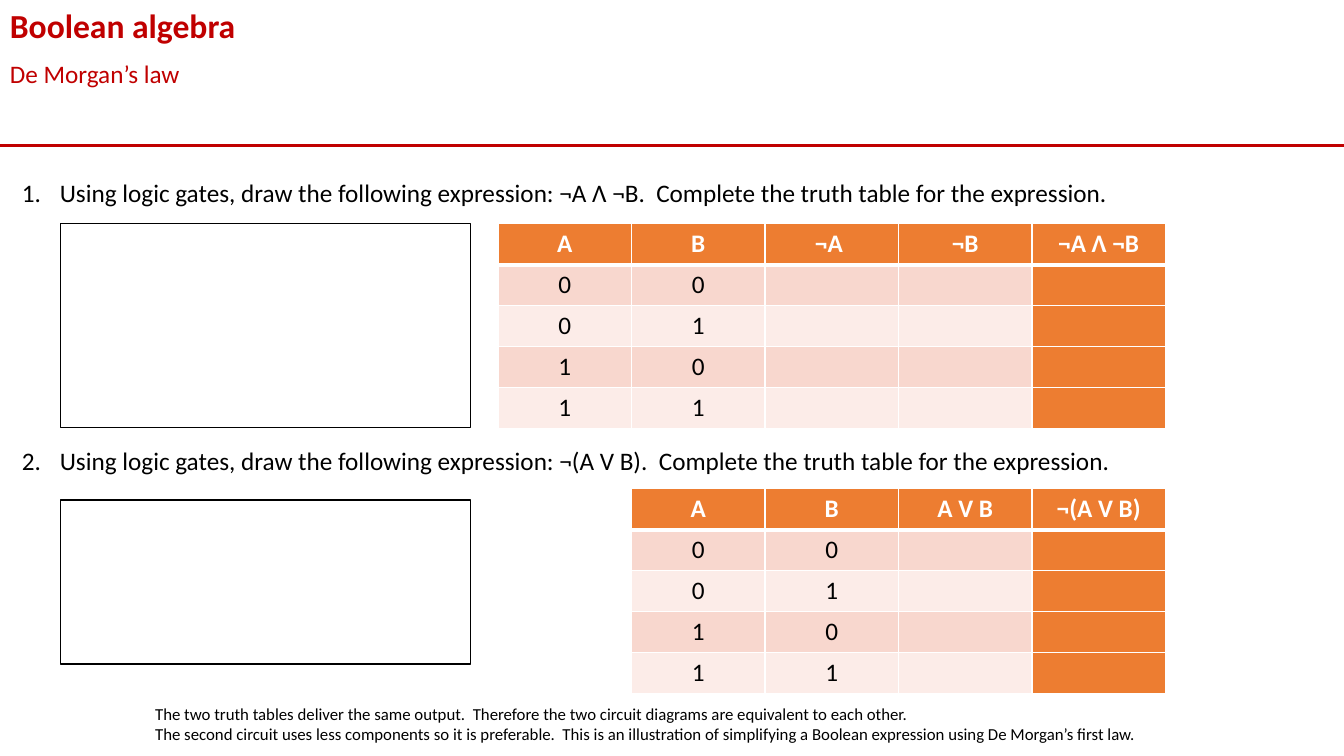
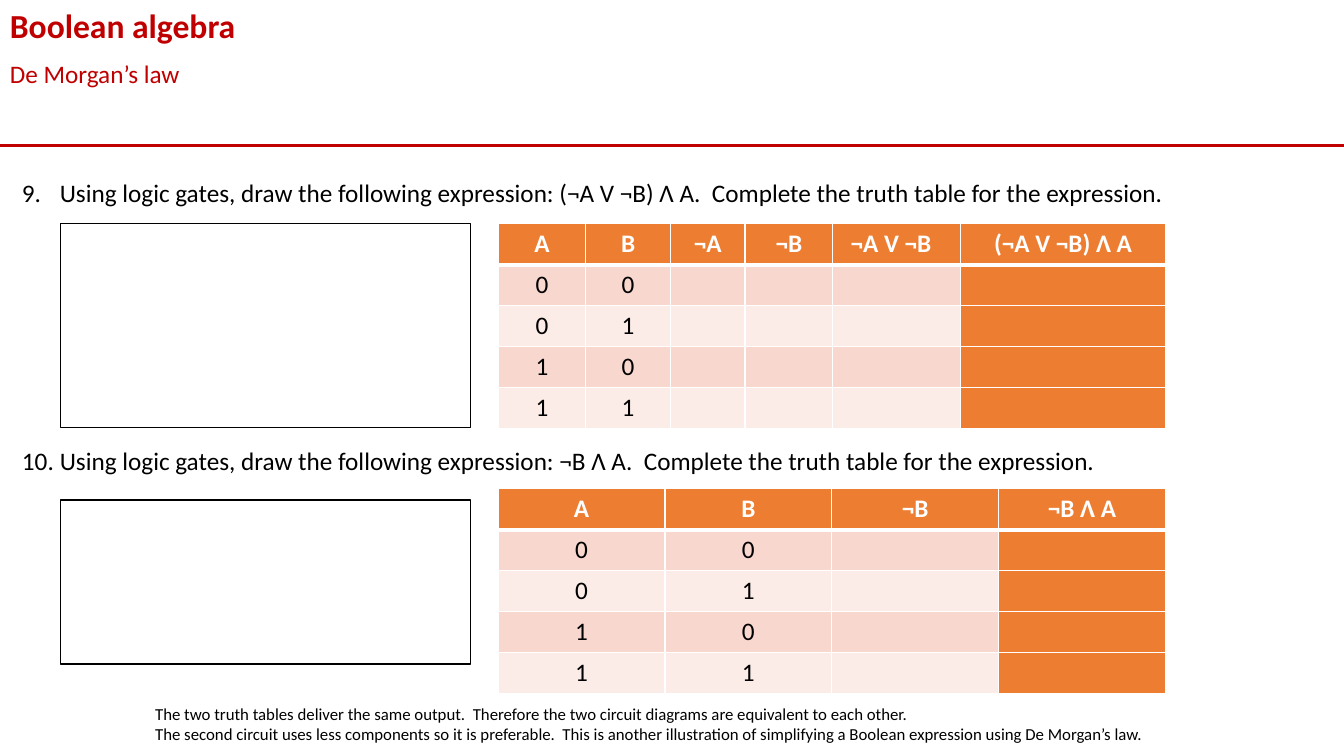
"""Build two Boolean algebra worksheet slides on De Morgan's law."""
import dataclasses

import pptx
import pptx.dml.color
import pptx.enum.shapes
import pptx.enum.text
import pptx.oxml
import pptx.oxml.ns
import pptx.util

Inches = pptx.util.Inches
Pt = pptx.util.Pt

HEADINGS = [("Boolean algebra", 0, 0.5, "title", True), ("De Morgan’s law", 0.53, 0.4, "body", False)]
QUESTION = "Using logic gates, draw the following expression: {}.  Complete the truth table for the expression."
INPUTS = [("0", "0"), ("0", "1"), ("1", "0"), ("1", "1")]
SAME_OUTPUT = (
    "The two truth tables deliver the same output.  "
    "Therefore the two circuit diagrams are equivalent to each other."
)
PREFERABLE = (
    "The second circuit uses less components so it is preferable.  This is {} "
    "of simplifying a Boolean expression using De Morgan’s {}."
)
WORKSHEETS = [
    {
        "first_number": 1,
        "questions": [
            ("¬A Ʌ ¬B", ["A", "B", "¬A ", "¬B", "¬A Ʌ ¬B"], [1.324] * 5),
            ("¬(A V B)", ["A", "B", "A V B", "¬(A V B)"], [1.324] * 4),
        ],
        "note": [SAME_OUTPUT, PREFERABLE.format("an illustration", "first law")],
        "note_width": 10.01,
    },
    {
        "first_number": 9,
        "questions": [
            (
                "(¬A V ¬B) Ʌ A",
                ["A", "B", "¬A", "¬B", "¬A V ¬B  ", "(¬A V ¬B) Ʌ A"],
                [0.87, 0.84, 0.74, 0.87, 1.27, 2.03],
            ),
            ("¬B Ʌ A", ["A", "B", "¬B", "¬B Ʌ A"], [1.655] * 4),
        ],
        "note": [SAME_OUTPUT, PREFERABLE.format("another illustration", "law")],
        "note_width": 10.12,
    },
]
SECTIONS = [
    {"question": 1.71, "table": 2.22, "answer": 2.22, "answer_height": 2.02},
    {"question": 4.37, "table": 4.85, "answer": 4.96, "answer_height": 1.63},
]
PAGE_WIDTH, PAGE_HEIGHT = 13.33, 7.5
TABLE_RIGHT = 11.56
TABLE_HEIGHT = 2.03


@dataclasses.dataclass(frozen=True)
class Theme:
    font: str = "Calibri"
    red: str = "C00000"
    black: str = "000000"
    white: str = "FFFFFF"
    orange: str = "ED7D31"
    bands: tuple = ("F8D7CE", "FCECE8")
    title: int = 24
    body: int = 18
    note: int = 12


THEME = Theme()


def rgb(value):
    return pptx.dml.color.RGBColor.from_string(value)


def style_text(frame, size, color, bold=False):
    for para in frame.paragraphs:
        for span in para.runs:
            span.font.name = THEME.font
            span.font.size = Pt(size)
            span.font.bold = bold
            span.font.color.rgb = rgb(color)


def add_text(page, bounds, text, size, color, bold=False, wrap=True):
    box = page.shapes.add_textbox(*map(Inches, bounds))
    frame = box.text_frame
    frame.word_wrap = wrap
    frame.auto_size = pptx.enum.text.MSO_AUTO_SIZE.SHAPE_TO_FIT_TEXT
    frame.text = text
    style_text(frame, size, color, bold)
    return frame


def add_header(page):
    rule = page.shapes.add_connector(
        pptx.enum.shapes.MSO_CONNECTOR.STRAIGHT, 0, Inches(1.44), Inches(PAGE_WIDTH), Inches(1.44)
    )
    rule.line.color.rgb = rgb(THEME.red)
    rule.line.width = Pt(2.25)
    pptx.oxml.ns.qn("a:effectLst")
    rule._element.spPr.append(make_element("<a:effectLst {}/>"))
    for text, top, height, size, bold in HEADINGS:
        add_text(page, (0, top, PAGE_WIDTH, height), text, getattr(THEME, size), THEME.red, bold)


def make_element(markup):
    return pptx.oxml.parse_xml(markup.format(pptx.oxml.ns.nsdecls("a")))


def add_question(page, top, number, expression):
    frame = add_text(page, (0.12, top, 13.07, 0.4), QUESTION.format(expression), THEME.body, THEME.black)
    properties = frame.paragraphs[0]._p.get_or_add_pPr()
    properties.set("marL", str(Inches(0.375)))
    properties.set("indent", str(-Inches(0.375)))
    properties.append(make_element(f'<a:buAutoNum {{}} type="arabicPeriod" startAt="{number}"/>'))


def add_borders(cell, row):
    properties = cell._tc.get_or_add_tcPr()
    widths = {"L": 1, "R": 1, "T": 3 if row == 1 else 1, "B": 3 if row == 0 else 1}
    for side, width in widths.items():
        properties.append(make_element(
            f'<a:ln{side} {{}} w="{Pt(width)}"><a:solidFill>'
            f'<a:srgbClr val="{THEME.white}"/></a:solidFill></a:ln{side}>'
        ))


def add_truth_table(page, top, headings, widths):
    total = sum(widths)
    rows = [headings] + [[*values] + [""] * (len(headings) - 2) for values in INPUTS]
    bounds = (TABLE_RIGHT - total, top, total, TABLE_HEIGHT)
    table = page.shapes.add_table(len(rows), len(headings), *map(Inches, bounds)).table
    for column, width in zip(table.columns, widths):
        column.width = Inches(width)
    for row, values in enumerate(rows):
        for column, value in enumerate(values):
            cell = table.cell(row, column)
            is_header = row == 0
            is_result = column == len(headings) - 1
            add_borders(cell, row)
            cell.fill.solid()
            cell.fill.fore_color.rgb = rgb(
                THEME.orange if is_header or is_result else THEME.bands[(row - 1) % 2]
            )
            if value:
                cell.text_frame.text = value
                cell.text_frame.paragraphs[0].alignment = pptx.enum.text.PP_ALIGN.CENTER
                style_text(cell.text_frame, THEME.body, THEME.white if is_header else THEME.black, is_header)


def add_answer_box(page, top, height):
    box = page.shapes.add_shape(
        pptx.enum.shapes.MSO_SHAPE.RECTANGLE, *map(Inches, (0.6, top, 4.07, height))
    )
    box.shadow.inherit = False
    box.fill.background()
    box.line.color.rgb = rgb(THEME.black)
    box.line.width = Pt(1)


def add_worksheet(deck, worksheet):
    page = deck.slides.add_slide(deck.slide_layouts[6])
    add_header(page)
    for offset, (section, question) in enumerate(zip(SECTIONS, worksheet["questions"])):
        expression, headings, widths = question
        add_question(page, section["question"], worksheet["first_number"] + offset, expression)
        add_truth_table(page, section["table"], headings, widths)
        add_answer_box(page, section["answer"], section["answer_height"])
    note_bounds = (1.44, 6.93, worksheet["note_width"], 0.5)
    add_text(page, note_bounds, "\n".join(worksheet["note"]), THEME.note, THEME.black, wrap=False)


def main():
    deck = pptx.Presentation()
    deck.slide_width = Inches(PAGE_WIDTH)
    deck.slide_height = Inches(PAGE_HEIGHT)
    for worksheet in WORKSHEETS:
        add_worksheet(deck, worksheet)
    deck.save("out.pptx")


if __name__ == "__main__":
    main()
